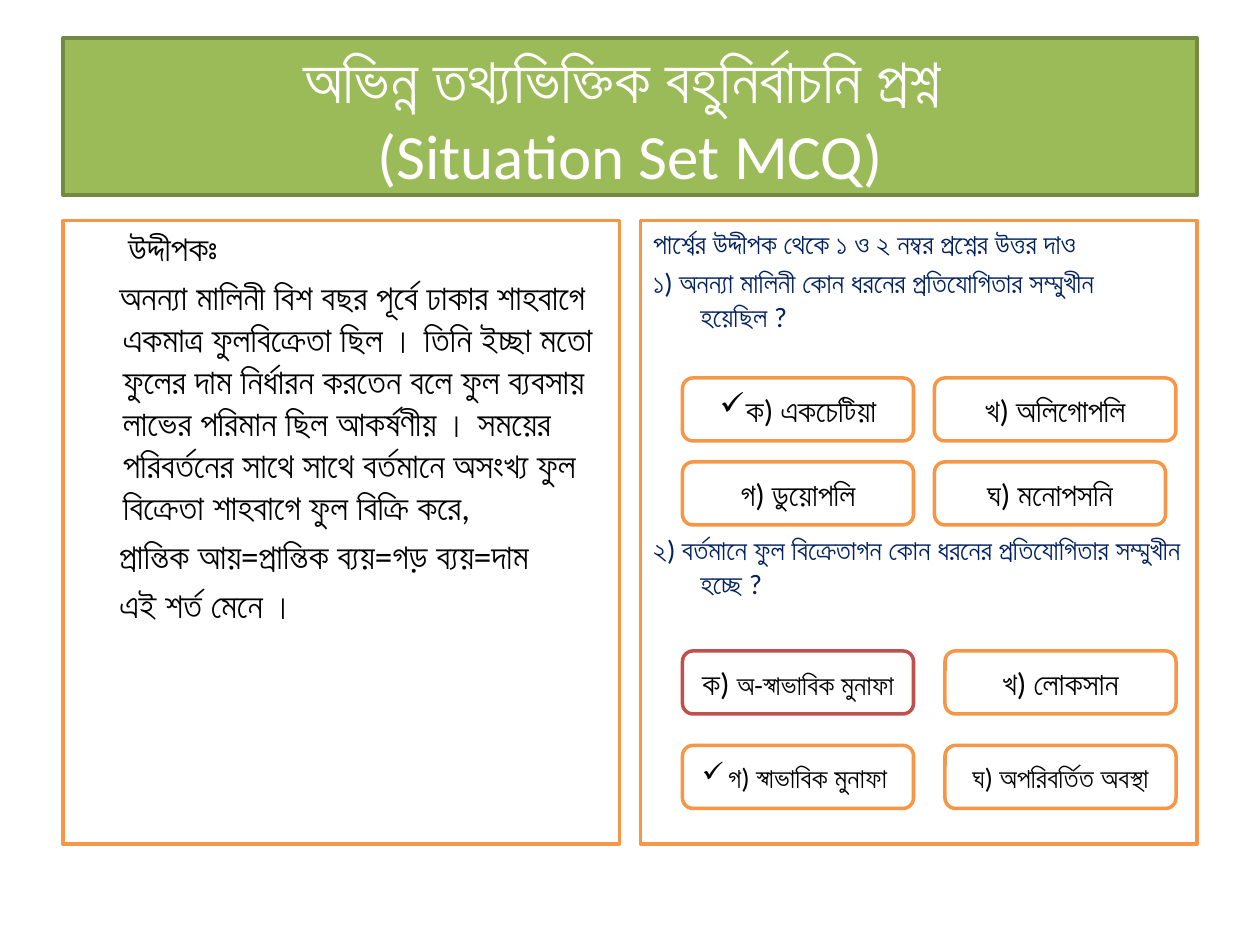
from lxml.etree import SubElement
from pptx import Presentation
from pptx.dml.color import RGBColor
from pptx.enum.shapes import MSO_SHAPE
from pptx.enum.text import MSO_ANCHOR, MSO_AUTO_SIZE, PP_ALIGN
from pptx.oxml.ns import qn
from pptx.util import Pt

ORANGE, RED, NAVY, BLACK = "F79646", "C0504D", "002060", "000000"


def paint(shape, fill, line):
    shape.fill.solid()
    shape.fill.fore_color.rgb = RGBColor.from_string(fill)
    shape.line.color.rgb = RGBColor.from_string(line)
    shape.line.width = Pt(2)


def write(par, text, size=18, color=BLACK, align=None, left=0, first=0,
          before=0, mark=None):
    """Add a run to a paragraph and set the paragraph's indents and bullet."""
    run = par.add_run()
    run.text = text
    run.font.name = "Calibri"
    run.font.size = Pt(size)
    run.font.color.rgb = RGBColor.from_string(color)
    par.alignment = align
    par.space_before = Pt(before)
    props = par._p.get_or_add_pPr()
    props.set("marL", str(Pt(left)))
    props.set("indent", str(Pt(first)))
    for old in props.findall(qn("a:buNone")) + props.findall(qn("a:buChar")):
        props.remove(old)
    if mark:
        SubElement(props, qn("a:buChar"), char=mark)
    else:
        SubElement(props, qn("a:buNone"))


deck = Presentation()
deck.slide_width, deck.slide_height = Pt(720), Pt(540)
slide = deck.slides.add_slide(deck.slide_layouts[3])
title, story, quiz = slide.placeholders

# Title band
title.left, title.top, title.width, title.height = Pt(36), Pt(21.6), Pt(648), Pt(90)
paint(title, "9BBB59", "738A42")
title.text_frame.auto_size = MSO_AUTO_SIZE.NONE
title.text_frame.vertical_anchor = MSO_ANCHOR.MIDDLE
head = title.text_frame.paragraphs[0]
look = dict(size=36, color="FFFFFF", align=PP_ALIGN.CENTER)
write(head, "অভিন্ন তথ্যভিক্তিক বহুনির্বাচনি প্রশ্ন ", **look)
head.add_line_break()
SubElement(head._p.find(qn("a:br")), qn("a:rPr"), sz="3600")
write(head, "(Situation Set MCQ)", **look)

# Story on the left, questions on the right: (text, first-line indent, space before)
tale = [
    ("উদ্দীপকঃ", 3, 4),
    ("অনন্যা মালিনী বিশ বছর পূর্বে ঢাকার শাহবাগে একমাত্র ফুলবিক্রেতা ছিল । "
     "তিনি ইচ্ছা মতো ফুলের দাম নির্ধারন করতেন বলে ফুল ব্যবসায় লাভের পরিমান ছিল "
     "আকর্ষণীয় । সময়ের পরিবর্তনের সাথে সাথে বর্তমানে অসংখ্য ফুল বিক্রেতা "
     "শাহবাগে ফুল বিক্রি করে,", -2, 4),
    ("প্রান্তিক আয়=প্রান্তিক ব্যয়=গড় ব্যয়=দাম", -2, 4),
    ("এই শর্ত মেনে ।", -2, 4),
]
asks = [
    ("পার্শ্বের উদ্দীপক থেকে ১ ও ২ নম্বর প্রশ্নের উত্তর দাও", -27, 3.2),
    ("১) অনন্যা মালিনী কোন ধরনের প্রতিযোগিতার সম্মুখীন হয়েছিল ?", -27, 3.2),
    ("২) বর্তমানে ফুল বিক্রেতাগন কোন ধরনের প্রতিযোগিতার সম্মুখীন হচ্ছে ?", -27, 114),
]
for box, left, rows, size, color in [(story, 36, tale, 20, BLACK),
                                     (quiz, 366, asks, 16, NAVY)]:
    box.left, box.top, box.width, box.height = Pt(left), Pt(126), Pt(318), Pt(356.4)
    paint(box, "FFFFFF", ORANGE)
    frame = box.text_frame
    frame.auto_size = MSO_AUTO_SIZE.NONE
    for n, (text, first, before) in enumerate(rows):
        par = frame.add_paragraph() if n else frame.paragraphs[0]
        write(par, text, size, color, left=27, first=first, before=before)

# Answer buttons: left, top, width, line, bullet, runs
answers = [
    (390, 216, 132, ORANGE, "✓", [("ক) একচেটিয়া", 18)]),
    (534, 216, 138, ORANGE, None, [("খ) অলিগোপলি", 18)]),
    (390, 264, 132, ORANGE, None, [("গ) ডুয়োপলি", 18)]),
    (534, 264, 132, ORANGE, None, [("ঘ) মনোপসনি", 18)]),
    (390, 372, 132, RED, None, [("ক) ", 18), ("অ-স্বাভাবিক মুনাফা", 16)]),
    (540, 372, 132, ORANGE, None, [("খ) লোকসান", 18)]),
    (390, 426, 132, ORANGE, "✓", [("গ) স্বাভাবিক মুনাফা ", 16)]),
    (540, 426, 132, ORANGE, None, [("ঘ) অপরিবর্তিত অবস্থা", 16)]),
]
for left, top, width, line, mark, runs in answers:
    button = slide.shapes.add_shape(MSO_SHAPE.ROUNDED_RECTANGLE,
                                    Pt(left), Pt(top), Pt(width), Pt(36))
    button.shadow.inherit = False
    paint(button, "FFFFFF", line)
    frame = button.text_frame
    frame.word_wrap = True
    frame.vertical_anchor = MSO_ANCHOR.MIDDLE
    hang = 15 if mark else 0
    for text, size in runs:
        write(frame.paragraphs[0], text, size, align=PP_ALIGN.CENTER,
              left=hang, first=-hang, mark=mark)

deck.save("out.pptx")
